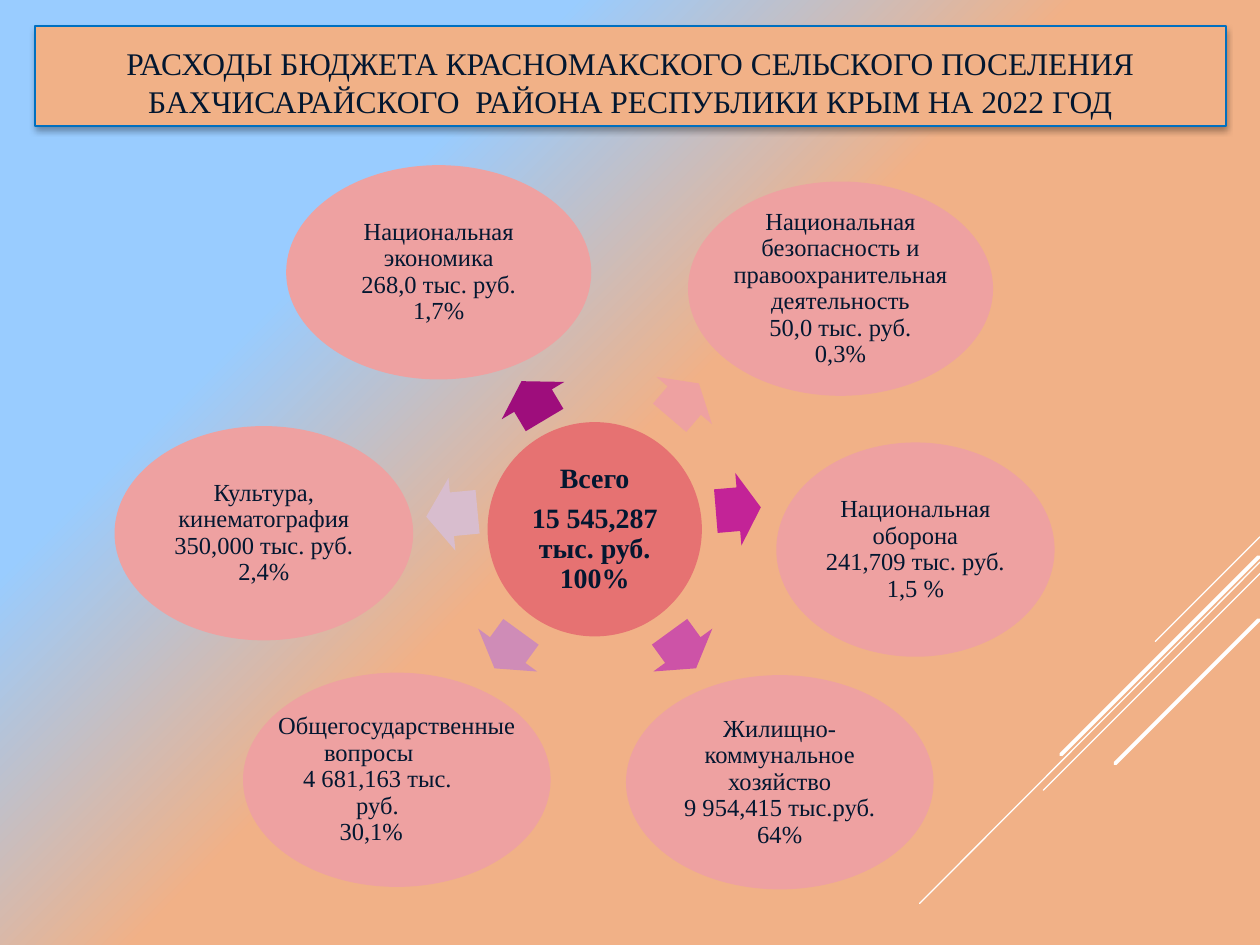
"""Build a slide showing the yearly expenses of a rural settlement budget."""
from lxml.etree import SubElement
from pptx import Presentation
from pptx.dml.color import RGBColor
from pptx.enum.shapes import MSO_CONNECTOR, MSO_SHAPE
from pptx.enum.text import MSO_ANCHOR, PP_ALIGN
from pptx.oxml import parse_xml
from pptx.oxml.ns import nsdecls, qn
from pptx.util import Cm, Pt

INK = "031730"
PEACH = "F1B187"
PINK = "EEA1A1"
OVAL_HEIGHT = 4.32
OVAL_MARGIN = 0.69
OVAL_INSET = 0.1464


def color(value):
    return RGBColor.from_string(value)


def add_filled(kind, left, top, width, height, fill):
    shape = page.shapes.add_shape(kind, Cm(left), Cm(top), Cm(width), Cm(height))
    shape.shadow.inherit = False
    shape.fill.solid()
    shape.fill.fore_color.rgb = color(fill)
    shape.line.fill.background()
    shape.text_frame.word_wrap = True
    return shape


deck = Presentation()
deck.slide_width, deck.slide_height = Cm(25.4), Cm(19.05)
page = deck.slides.add_slide(deck.slide_layouts[6])

backdrop = page.background.fill
backdrop.gradient()
gradient = page.background._cSld.find(".//" + qn("a:gradFill"))
gradient.getparent().replace(gradient, parse_xml(
    f'<a:gradFill {nsdecls("a")} rotWithShape="1"><a:gsLst>'
    f'<a:gs pos="51000"><a:srgbClr val="{PEACH}"/></a:gs>'
    '<a:gs pos="74000"><a:srgbClr val="99CCFF"/></a:gs></a:gsLst>'
    '<a:path path="circle"><a:fillToRect l="100000" t="100000"/></a:path></a:gradFill>'))

stripes = [
    (25.4, 10.82, 23.29, 12.93, 0.75),
    (25.4, 11.33, 18.54, 18.21, 0.75),
    (25.4, 11.56, 21.03, 15.93, 0.75),
    (25.37, 11.23, 21.39, 15.21, 2.25),
    (25.37, 12.5, 22.48, 15.39, 2.25),
]
for x1, y1, x2, y2, weight in stripes:
    stripe = page.shapes.add_connector(
        MSO_CONNECTOR.STRAIGHT, Cm(x1), Cm(y1), Cm(x2), Cm(y2))
    stripe.line.color.rgb = color("FFFFFF")
    stripe.line.width = Pt(weight)
    stripe.line._ln.set("cap", "rnd")
    SubElement(stripe._element.spPr, qn("a:effectLst"))

title = add_filled(MSO_SHAPE.RECTANGLE, 0.71, 0.53, 24, 2.01, PEACH)
title.line.color.rgb = color("0070C0")
title.line.width = Pt(1)
effects = title._element.spPr.find(qn("a:effectLst"))
effects.append(parse_xml(
    f'<a:outerShdw {nsdecls("a")} blurRad="44450" dist="27940" dir="5400000">'
    '<a:srgbClr val="000000"><a:alpha val="32000"/></a:srgbClr></a:outerShdw>'))
title.text_frame.vertical_anchor = MSO_ANCHOR.BOTTOM
para = title.text_frame.paragraphs[0]
para.alignment = PP_ALIGN.CENTER
span = para.add_run()
span.text = ("РАСХОДЫ БЮДЖЕТА КРАСНОМАКСКОГО СЕЛЬСКОГО ПОСЕЛЕНИЯ "
             "БАХЧИСАРАЙСКОГО  РАЙОНА РЕСПУБЛИКИ КРЫМ НА 2022 ГОД")
span.font.name, span.font.size = "Times New Roman", Pt(18)
span.font.color.rgb = color(INK)

arrows = [
    (10.29, 7.34, 0.91, 239.2, "9E0D7C"),
    (14.43, 9.53, 0.91, 355.2, "C32397"),
    (13.31, 12.37, 0.91, 54, "CD53A7"),
    (9.78, 12.37, 0.91, 126, "CF8CB7"),
    (8.59, 9.63, 1.04, 174.6, "D8BDCE"),
    (13.34, 7.34, 0.91, 310.5, PINK),
]
for left, top, width, angle, fill in arrows:
    arrow = add_filled(MSO_SHAPE.RIGHT_ARROW, left, top, width, 1.47, fill)
    arrow.adjustments[0] = 0.6
    arrow.adjustments[1] = 0.5
    arrow.rotation = angle

total = (9.83, 8.51, OVAL_HEIGHT, "E67272", 16,
         [("Всего", 0), ("15 545,287 тыс. руб. 100%", 0)])
sections = [
    (5.77, 3.33, 6.15, [("Национальная экономика", 0), ("268,0 тыс. руб.", 0), ("1,7%", 0)]),
    (15.65, 8.92, 5.61, [("Национальная оборона", 0), ("241,709 тыс. руб.", 0), ("1,5 %", 0)]),
    (12.62, 13.61, 6.2, [("Жилищно-коммунальное хозяйство", 0),
                         ("9 954,415 тыс.руб.", 0), ("64%", 0)]),
    (4.9, 13.56, 6.2, [("Общегосударственные", 0), ("вопросы", -1.13),
                       ("4 681,163 тыс. руб.", 0.35), ("30,1%", 0.1)]),
    (2.31, 8.59, 6.02, [("Культура, кинематография", 0),
                        ("350,000 тыс. руб.", 0), ("2,4%", 0)]),
    (13.87, 3.66, 6.15, [("Национальная безопасность и правоохранительная деятельность", 0),
                         ("50,0 тыс. руб.", 0), ("0,3%", 0)]),
]
ovals = [total] + [(*place, PINK, 14, lines) for *place, lines in sections]
for left, top, width, fill, size, lines in ovals:
    oval = add_filled(MSO_SHAPE.OVAL, left, top, width, OVAL_HEIGHT, fill)
    box = oval.text_frame
    box.vertical_anchor = MSO_ANCHOR.MIDDLE
    box.margin_left = box.margin_right = Cm(OVAL_MARGIN - OVAL_INSET * width)
    box.margin_top = box.margin_bottom = Cm(0)
    for index, (text, shift) in enumerate(lines):
        para = box.add_paragraph() if index else box.paragraphs[0]
        para.alignment = PP_ALIGN.CENTER
        para.line_spacing = 0.9
        if text == "Всего":
            para.space_after = Pt(5.6)
        if shift:
            para._p.get_or_add_pPr().set("marL" if shift > 0 else "marR", str(Cm(abs(shift))))
        span = para.add_run()
        span.text = text
        span.font.name, span.font.size = "Times New Roman", Pt(size)
        span.font.bold = size == 16
        span.font.color.rgb = color(INK)

deck.save("out.pptx")
